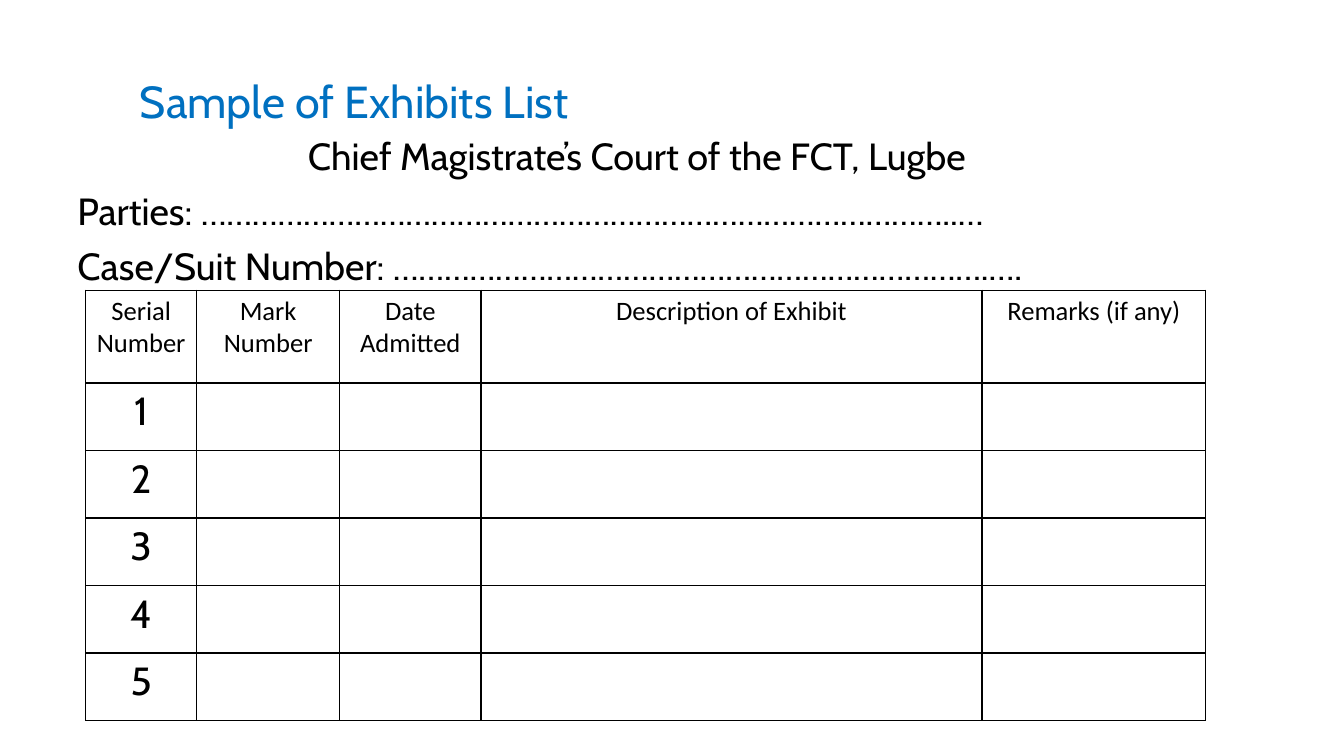
"""Build the sample exhibits list slide."""
from dataclasses import dataclass

from lxml import etree
from pptx import Presentation
from pptx.dml.color import RGBColor
from pptx.enum.text import MSO_ANCHOR, PP_ALIGN
from pptx.oxml.ns import qn
from pptx.util import Inches, Pt

LEFT, CENTER, JUSTIFY = PP_ALIGN.LEFT, PP_ALIGN.CENTER, PP_ALIGN.JUSTIFY
TOP, BOTTOM = MSO_ANCHOR.TOP, MSO_ANCHOR.BOTTOM
BLUE = RGBColor(0x00, 0x70, 0xC0)
BLACK = RGBColor(0x00, 0x00, 0x00)


@dataclass(frozen=True)
class Style:
    size: int
    font: str
    color: RGBColor = BLACK


@dataclass(frozen=True)
class Line:
    text: str
    align: PP_ALIGN


@dataclass(frozen=True)
class Block:
    box: tuple[float, float, float, float]
    anchor: MSO_ANCHOR
    style: Style
    lines: tuple[Line, ...]


@dataclass(frozen=True)
class Column:
    head: str
    width: float


BLOCKS = (
    Block((1.29, 0.52, 11.1, 0.8), BOTTOM, Style(32, "Cabin", BLUE),
          (Line("Sample of Exhibits List", LEFT),)),
    Block((0.67, 1.32, 11.29, 5.66), TOP, Style(27, "Cabin"), (
        Line("Chief Magistrate’s Court of the FCT, Lugbe", CENTER),
        Line("Parties: ……………………………………………………………………………..…", JUSTIFY),
        Line("Case/Suit Number: …………………………………………………………….….", JUSTIFY),
    )),
)
COLUMNS = (
    Column("Serial Number", 1.1),
    Column("Mark Number", 1.42),
    Column("Date Admitted", 1.4),
    Column("Description of Exhibit", 4.97),
    Column("Remarks (if any)", 2.22),
)
HEAD = Style(19, "Calibri")
DIGIT = Style(28, "Cabin")
ROWS = 5
HEAD_H, ROW_H = 0.92, 0.67


def write(para, text: str, align: PP_ALIGN, style: Style) -> None:
    para.text = text
    para.alignment = align
    para.font.size = Pt(style.size)
    para.font.name = style.font
    para.font.color.rgb = style.color


def add_block(slide, block: Block) -> None:
    frame = slide.shapes.add_textbox(*map(Inches, block.box)).text_frame
    frame.word_wrap = True
    frame.vertical_anchor = block.anchor
    for i, line in enumerate(block.lines):
        para = frame.add_paragraph() if i else frame.paragraphs[0]
        write(para, line.text, line.align, block.style)
        para.line_spacing = 0.9
        if i:
            para.space_before = Pt(10)


def add_border(cell) -> None:
    props = cell._tc.get_or_add_tcPr()
    for i, side in enumerate(("a:lnL", "a:lnR", "a:lnT", "a:lnB")):
        edge = etree.Element(qn(side), w=str(Pt(1)))
        fill = etree.SubElement(edge, qn("a:solidFill"))
        etree.SubElement(fill, qn("a:srgbClr"), val=str(BLACK))
        props.insert(i, edge)


def add_list(slide) -> None:
    width = sum(col.width for col in COLUMNS)
    height = HEAD_H + ROWS * ROW_H
    table = slide.shapes.add_table(
        ROWS + 1, len(COLUMNS), Inches(0.85), Inches(2.88),
        Inches(width), Inches(height)).table
    table.first_row = table.horz_banding = False
    for i, row in enumerate(table.rows):
        row.height = Inches(ROW_H if i else HEAD_H)
        for cell in row.cells:
            cell.fill.background()
            add_border(cell)
        if i:
            write(row.cells[0].text_frame.paragraphs[0], str(i), CENTER, DIGIT)
    for i, col in enumerate(COLUMNS):
        table.columns[i].width = Inches(col.width)
        write(table.cell(0, i).text_frame.paragraphs[0], col.head, CENTER, HEAD)


def main() -> None:
    deck = Presentation()
    deck.slide_width, deck.slide_height = Inches(13.33), Inches(7.5)
    slide = deck.slides.add_slide(deck.slide_layouts[6])
    for block in BLOCKS:
        add_block(slide, block)
    add_list(slide)
    deck.save("out.pptx")


if __name__ == "__main__":
    main()
